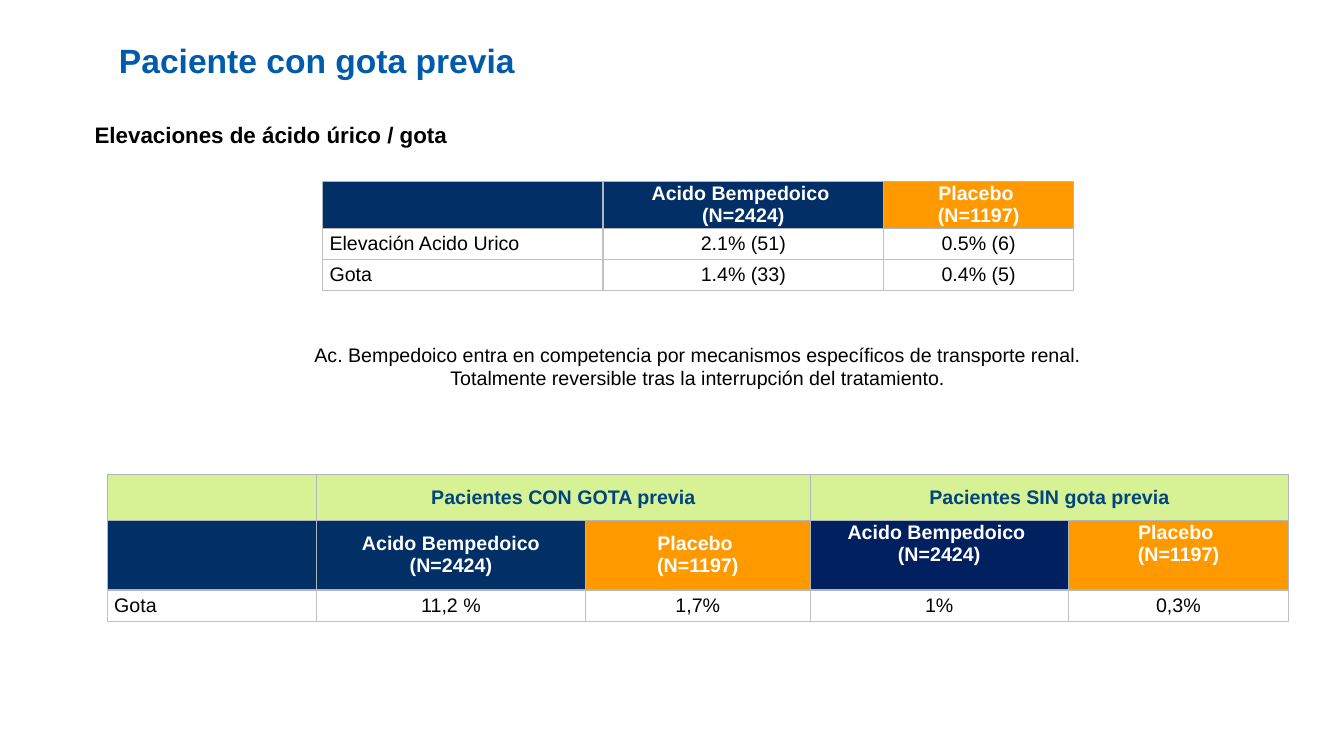
"""Build the slide on uric acid elevation and gout in patients with earlier gout."""
from typing import NamedTuple

from lxml.etree import SubElement
from pptx import Presentation
from pptx.dml.color import RGBColor
from pptx.enum.text import MSO_ANCHOR as Anchor, PP_ALIGN as Align
from pptx.oxml.ns import qn
from pptx.util import Pt

WHITE = RGBColor(0xFF, 0xFF, 0xFF)
BLACK = RGBColor(0x00, 0x00, 0x00)
TITLE_BLUE = RGBColor(0x00, 0x5B, 0xAA)
NAVY = RGBColor(0x01, 0x2F, 0x66)
DEEP_NAVY = RGBColor(0x00, 0x20, 0x60)
GROUP_BLUE = RGBColor(0x00, 0x44, 0x80)
ORANGE = RGBColor(0xFF, 0x99, 0x00)
LIME = RGBColor(0xD6, 0xF2, 0x94)
HEADER_LINE = RGBColor(0xB0, 0xB7, 0xBB)
BODY_LINE = RGBColor(0xC1, 0xC1, 0xC1)


class CellStyle(NamedTuple):
    """Look of a table cell; margins are left/right, top, bottom in points."""
    fill: RGBColor
    color: RGBColor = WHITE
    bold: bool = True
    align: Align = Align.CENTER
    margins: tuple = (2, 0, 0)
    line: RGBColor = HEADER_LINE


GROUP = CellStyle(LIME, GROUP_BLUE)
DRUG = CellStyle(NAVY)
PLACEBO = CellStyle(ORANGE)
RAISED_DRUG = CellStyle(DEEP_NAVY, margins=(2, 0, 16))
RAISED_PLACEBO = CellStyle(ORANGE, margins=(2, 0, 16))
VALUE = CellStyle(WHITE, BLACK, False, Align.CENTER, (5, 2.8, 2.8), BODY_LINE)
LABEL = CellStyle(WHITE, BLACK, False, Align.LEFT, (5, 2.8, 2.8), BODY_LINE)

DRUG_TEXT = "Acido Bempedoico \n(N=2424)"
PLACEBO_TEXT = "Placebo \n(N=1197)"


class SlideBuilder:
    """Hold the font and the slide, and add its text boxes and tables."""

    def __init__(self, slide, font="Arial"):
        self.slide = slide
        self.font = font

    def add_lines(self, paragraph, text, size, color, bold, align):
        """Add the lines of a text as runs parted by line breaks."""
        paragraph.alignment = align
        for index, line in enumerate(text.split("\n")):
            if index:
                paragraph.add_line_break()
            run = paragraph.add_run()
            run.text = line
            run.font.name = self.font
            run.font.size = Pt(size)
            run.font.bold = bold
            run.font.color.rgb = color

    def text(self, box, lines, size, color=BLACK, bold=False, align=Align.LEFT,
             anchor=Anchor.TOP, inset=(7.2, 3.6), spacing=1.0):
        """Add a text box with one paragraph for each line."""
        frame = self.slide.shapes.add_textbox(*map(Pt, box)).text_frame
        frame.word_wrap = True
        frame.vertical_anchor = anchor
        frame.margin_left = frame.margin_right = Pt(inset[0])
        frame.margin_top = frame.margin_bottom = Pt(inset[1])
        for index, line in enumerate(lines):
            paragraph = frame.add_paragraph() if index else frame.paragraphs[0]
            paragraph.line_spacing = spacing
            self.add_lines(paragraph, line, size, color, bold, align)

    def border(self, cell, line, top):
        """Draw the four edges of a cell."""
        properties = cell._tc.get_or_add_tcPr()
        for side, color in zip("LRTB", (line, line, top, line)):
            edge = SubElement(properties, qn(f"a:ln{side}"), w=str(Pt(1)))
            fill = SubElement(edge, qn("a:solidFill"))
            SubElement(fill, qn("a:srgbClr"), val=str(color))

    def cell(self, cell, text, style, top):
        """Style one table cell and fill in its text."""
        self.border(cell, style.line, top)
        cell.fill.solid()
        cell.fill.fore_color.rgb = style.fill
        cell.vertical_anchor = Anchor.MIDDLE
        side, upper, lower = style.margins
        cell.margin_left = cell.margin_right = Pt(side)
        cell.margin_top, cell.margin_bottom = Pt(upper), Pt(lower)
        if text:
            self.add_lines(cell.text_frame.paragraphs[0], text, 14,
                           style.color, style.bold, style.align)

    def table(self, left, top, widths, heights, rows, merges=()):
        """Add a table from rows of (text, style) pairs."""
        frame = self.slide.shapes.add_table(
            len(heights), len(widths), Pt(left), Pt(top),
            Pt(sum(widths)), Pt(sum(heights)))
        table = frame.table
        table.first_row = table.horz_banding = False
        for column, width in zip(table.columns, widths):
            column.width = Pt(width)
        for row, height in zip(table.rows, heights):
            row.height = Pt(height)
        for first, last in merges:
            table.cell(*first).merge(table.cell(*last))
        for row_index, row in enumerate(rows):
            for column_index, (text, style) in enumerate(row):
                above = rows[max(row_index - 1, 0)][column_index][1]
                self.cell(table.cell(row_index, column_index),
                          text, style, above.line)


def body_row(label, *values):
    """Return a label cell followed by value cells."""
    return [(label, LABEL)] + [(value, VALUE) for value in values]


presentation = Presentation()
presentation.slide_width, presentation.slide_height = Pt(960), Pt(540)
builder = SlideBuilder(
    presentation.slides.add_slide(presentation.slide_layouts[6]))

builder.table(
    230.4, 129.6, (200.4, 200.4, 135.8), (33.4, 22.2, 22.2),
    [
        [("", DRUG), (DRUG_TEXT, DRUG), (PLACEBO_TEXT, PLACEBO)],
        body_row("Elevación Acido Urico", "2.1% (51)", "0.5% (6)"),
        body_row("Gota", "1.4% (33)", "0.4% (5)"),
    ])
builder.text((60.5, 83, 862.5, 26.6), ["Elevaciones de ácido úrico / gota"],
             16, bold=True)
builder.text((79.2, 25.9, 825.8, 37.4), ["Paciente con gota previa"], 24,
             TITLE_BLUE, True, anchor=Anchor.BOTTOM, inset=(5.8, 5.8),
             spacing=0.9)
builder.text((59, 241.2, 879, 41),
             ["Ac. Bempedoico entra en competencia por mecanismos "
              "específicos de transporte renal.",
              "Totalmente reversible tras la interrupción del tratamiento."],
             14, align=Align.CENTER)
builder.table(
    76.6, 338.9, (149.5, 192.1, 160.6, 184.3, 157.5), (32.6, 50, 22.2),
    [
        [("", GROUP), ("Pacientes CON GOTA previa", GROUP), ("", GROUP),
         ("Pacientes SIN gota previa", GROUP), ("", GROUP)],
        [("", DRUG), ("Acido Bempedoico\n(N=2424)", DRUG),
         (PLACEBO_TEXT, PLACEBO), (DRUG_TEXT, RAISED_DRUG),
         (PLACEBO_TEXT, RAISED_PLACEBO)],
        body_row("Gota", "11,2 %", "1,7%", "1%", "0,3%"),
    ],
    merges=[((0, 1), (0, 2)), ((0, 3), (0, 4))])

presentation.save("out.pptx")
